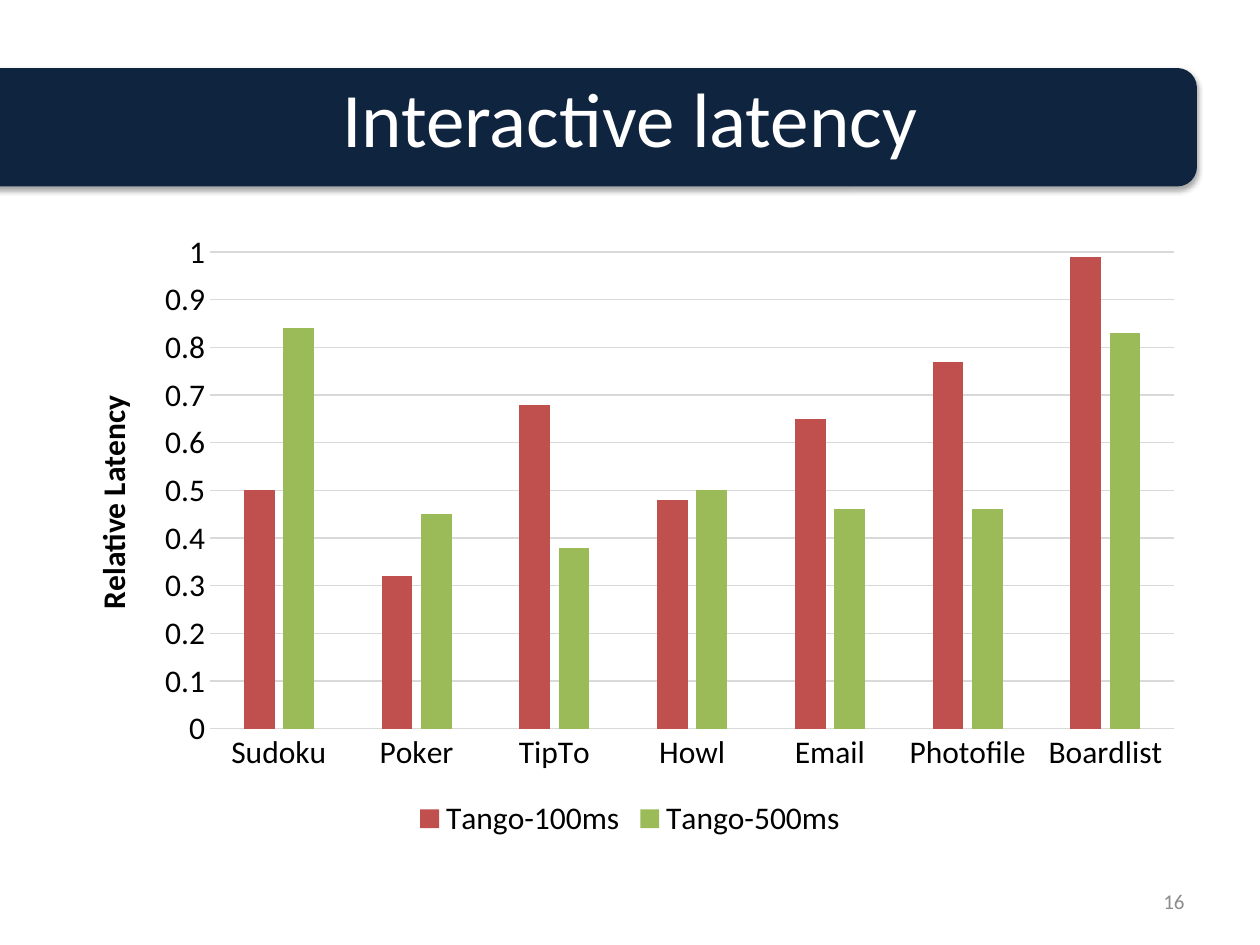
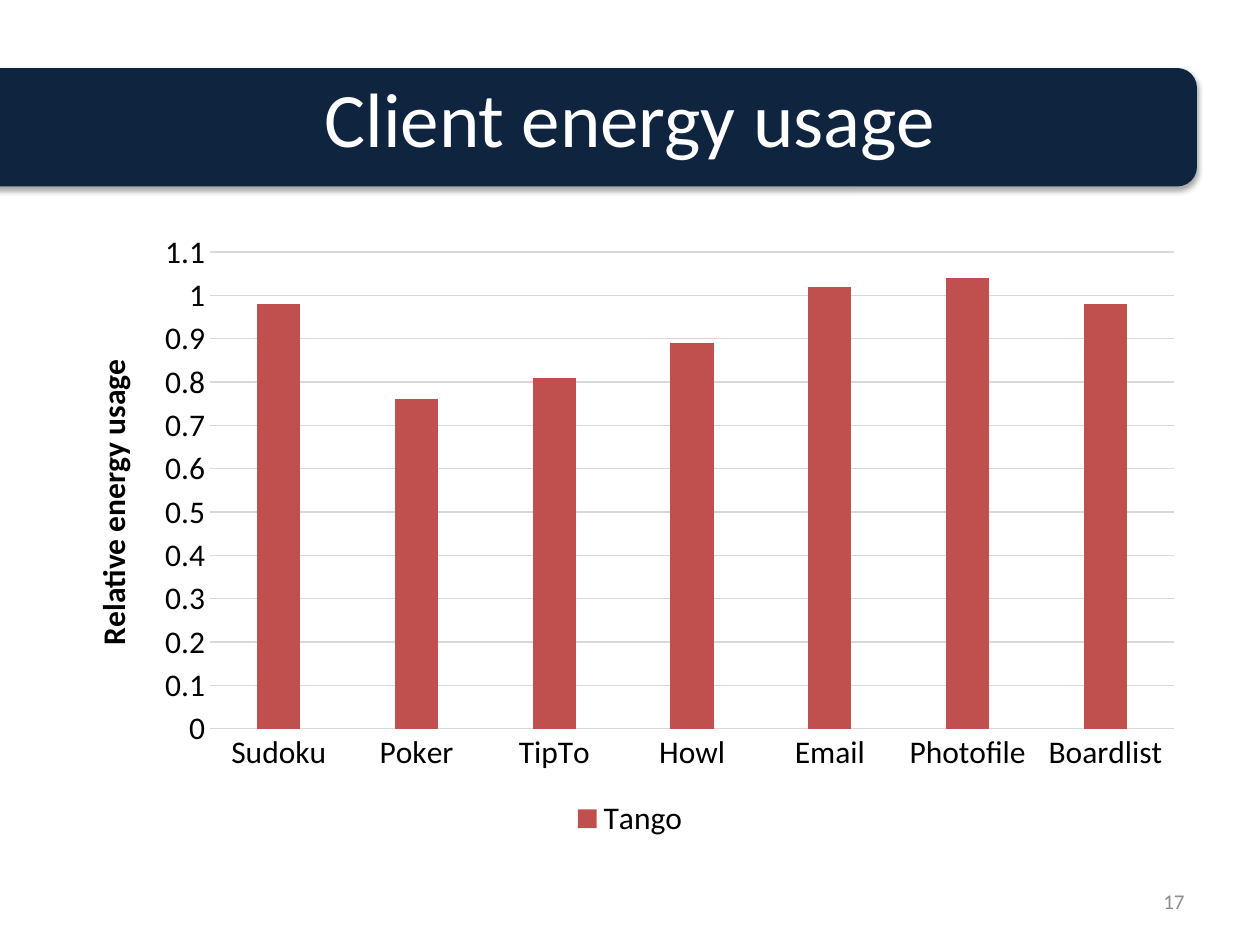
from pptx import Presentation
from pptx.chart.data import CategoryChartData
from pptx.dml.color import RGBColor
from pptx.enum.chart import XL_CHART_TYPE, XL_LEGEND_POSITION, XL_TICK_MARK
from pptx.enum.shapes import MSO_SHAPE
from pptx.enum.text import MSO_ANCHOR, PP_ALIGN
from pptx.oxml import parse_xml
from pptx.oxml.ns import nsdecls, qn
from pptx.util import Pt

COLUMNS = XL_CHART_TYPE.COLUMN_CLUSTERED
BOTTOM = XL_LEGEND_POSITION.BOTTOM
NO_TICK = XL_TICK_MARK.NONE
ROUND = MSO_SHAPE.ROUNDED_RECTANGLE
MIDDLE = MSO_ANCHOR.MIDDLE
CENTER, RIGHT = PP_ALIGN.CENTER, PP_ALIGN.RIGHT

APPS = ["Sudoku", "Poker", "TipTo", "Howl", "Email", "Photofile", "Boardlist"]
SLIDES = [
    {
        "title": "Interactive latency",
        "axis": "Relative Latency",
        "max": 1,
        "series": [
            ("Tango-100ms", [0.5, 0.32, 0.68, 0.48, 0.65, 0.77, 0.99]),
            ("Tango-500ms", [0.84, 0.45, 0.38, 0.5, 0.46, 0.46, 0.83]),
        ],
    },
    {
        "title": "Client energy usage",
        "axis": "Relative energy usage",
        "max": 1.1,
        "series": [("Tango", [0.98, 0.76, 0.81, 0.89, 1.02, 1.04, 0.98])],
    },
]
FIRST = 16

FONT = "Calibri"
NAVY, WHITE, BLACK, GRAY, GRID = "0F243E", "FFFFFF", "000000", "8C8C8C", "D9D9D9"
BARS = ["C0504D", "9BBB59"]

PX = 9144  # 100 px to the inch
BAND = (-71, 54, 1021, 94)
TITLE = (50, 30, 900, 125)
PLOT = (50, 175, 900, 495)
NUMBER = (717, 695, 233, 40)

SHADOW = f"""<a:effectLst {nsdecls("a")}>
  <a:outerShdw blurRad="40000" dist="23000" dir="5400000" rotWithShape="0">
    <a:srgbClr val="{BLACK}"><a:alpha val="35000"/></a:srgbClr>
  </a:outerShdw>
</a:effectLst>"""


def rgb(code):
    return RGBColor.from_string(code)


def emu(box):
    return [n * PX for n in box]


def style(font, size, color, bold=False):
    font.name, font.size, font.bold = FONT, Pt(size), bold
    font.color.rgb = rgb(color)


def rule(line):
    line.color.rgb = rgb(GRID)
    line.width = Pt(0.75)


def turn(part, angle):
    """Fix the angle, in degrees, of the first text body inside a chart part."""
    body = next(part.iter(qn("a:bodyPr")))
    body.set("rot", str(angle * 60000))
    body.set("vert", "horz")


def add_band(slide):
    band = slide.shapes.add_shape(ROUND, *emu(BAND))
    band.fill.solid()
    band.fill.fore_color.rgb = rgb(NAVY)
    band.line.fill.background()
    band.element.spPr.append(parse_xml(SHADOW))


def add_text(slide, box, text, size, color, align):
    frame = slide.shapes.add_textbox(*emu(box)).text_frame
    frame.word_wrap = True
    frame.vertical_anchor = MIDDLE
    para = frame.paragraphs[0]
    para.alignment = align
    run = para.add_run()
    run.text = text
    style(run.font, size, color)


def add_chart(slide, item):
    data = CategoryChartData()
    data.categories = APPS
    for name, vals in item["series"]:
        data.add_series(name, vals)
    chart = slide.shapes.add_chart(COLUMNS, *emu(PLOT), data).chart
    style(chart.font, 18, BLACK)
    chart.has_title = False
    chart.has_legend = True
    chart.legend.position = BOTTOM
    chart.legend.include_in_layout = False
    style(chart.legend.font, 18, BLACK)

    plot = chart.plots[0]
    plot.gap_width, plot.overlap = 219, -27
    plot.vary_by_categories = False
    for series, color in zip(plot.series, BARS):
        series.format.fill.solid()
        series.format.fill.fore_color.rgb = rgb(color)

    cats, vals = chart.category_axis, chart.value_axis
    for axis in (cats, vals):
        axis.major_tick_mark = axis.minor_tick_mark = NO_TICK
        style(axis.tick_labels.font, 18, BLACK)
    turn(cats._element.txPr, 0)
    rule(cats.format.line)
    vals.format.line.fill.background()
    vals.has_major_gridlines = True
    rule(vals.major_gridlines.format.line)
    vals.minimum_scale, vals.maximum_scale = 0, item["max"]
    vals.major_unit = 0.1

    title = vals.axis_title
    run = title.text_frame.paragraphs[0].add_run()
    run.text = item["axis"]
    style(run.font, 18, BLACK, True)
    turn(title._element, -90)


def main():
    deck = Presentation()
    deck.slide_width, deck.slide_height = emu((1000, 750))
    for number, item in enumerate(SLIDES, FIRST):
        slide = deck.slides.add_slide(deck.slide_layouts[6])
        add_band(slide)
        add_text(slide, TITLE, item["title"], 44, WHITE, CENTER)
        add_chart(slide, item)
        add_text(slide, NUMBER, str(number), 12, GRAY, RIGHT)
    deck.save("out.pptx")


if __name__ == "__main__":
    main()
